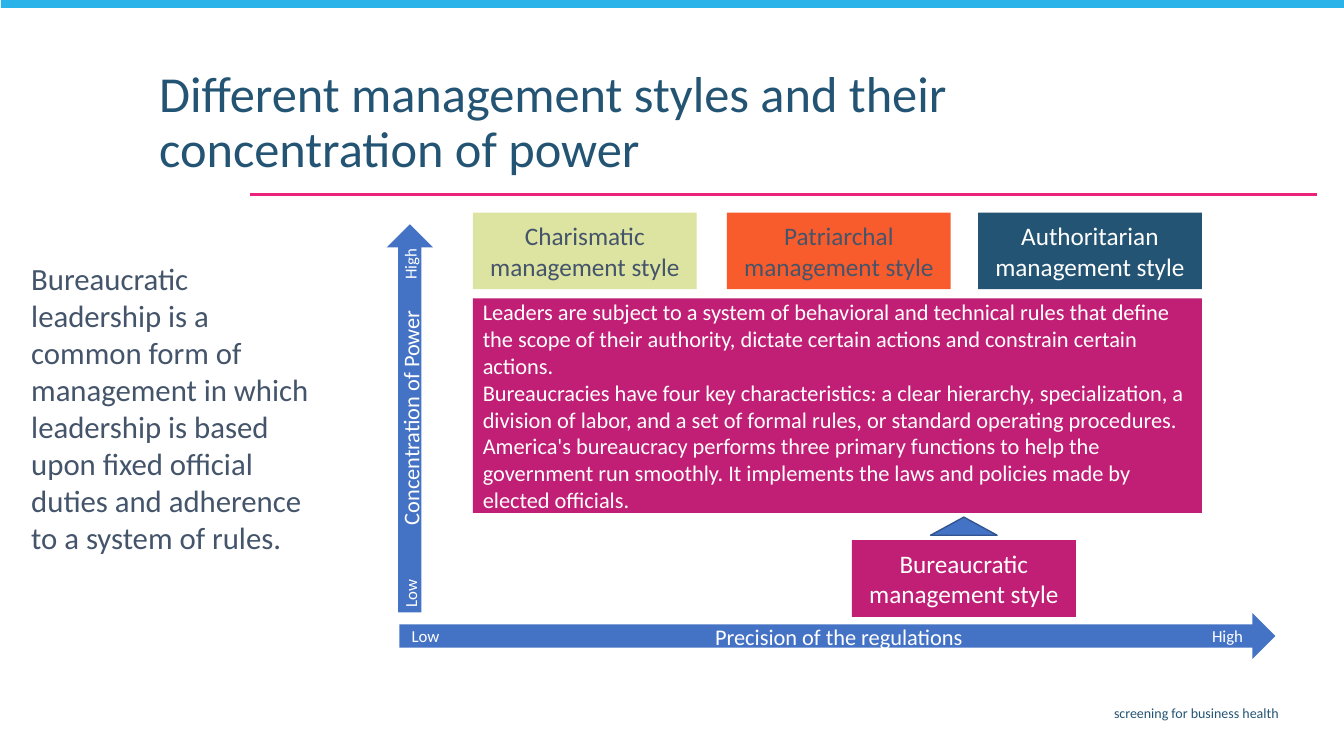
"""Slide on management styles placed by concentration of power and precision of rules."""
from lxml import etree
from pptx import Presentation, util as u
from pptx.dml.color import RGBColor
from pptx.enum import shapes as s, text as t
from pptx.oxml import ns

PX = 9144
COLORS = {
    "sky": "29B3E8", "pink": "EC2179", "navy": "245473", "slate": "44546A",
    "blue": "4472C4", "edge": "325491", "lime": "DDE3A0", "orange": "F95C2C",
    "magenta": "C01F75", "white": "FFFFFF",
}


def write(holder, paragraphs, size, color, align="LEFT", **frame_format):
    frame = holder.text_frame
    settings = {"word_wrap": True, "vertical_anchor": t.MSO_ANCHOR.TOP, **frame_format}
    for name, value in settings.items():
        setattr(frame, name, value)
    for index, words in enumerate(paragraphs):
        paragraph = frame.paragraphs[0] if index == 0 else frame.add_paragraph()
        paragraph.text = words
        paragraph.alignment = t.PP_ALIGN[align]
        font = {"name": "Calibri", "size": u.Pt(size)}
        for name, value in font.items():
            setattr(paragraph.font, name, value)
        paragraph.font.color.rgb = RGBColor.from_string(COLORS[color])


def block(preset, box, color):
    shape = slide.shapes.add_shape(s.MSO_SHAPE[preset], *(n * PX for n in box))
    shape.shadow.inherit = False
    shape.fill.solid()
    shape.fill.fore_color.rgb = RGBColor.from_string(COLORS[color])
    shape.line.fill.background()
    return shape


deck = Presentation()
deck.slide_width, deck.slide_height = 1333 * PX, 750 * PX
slide = deck.slides.add_slide(deck.slide_layouts[6])

title_rule = slide.shapes.add_connector(
    s.MSO_CONNECTOR.STRAIGHT, 1306 * PX, 193 * PX, 248 * PX, 193 * PX)
title_rule.line.color.rgb = RGBColor.from_string(COLORS["pink"])
title_rule.line.width = u.Pt(1.5)
etree.SubElement(title_rule.element.spPr, ns.qn("a:effectLst"))

block("RECTANGLE", (1, -2, 1334, 10), "sky")

footer = slide.shapes.add_textbox(365 * PX, 694 * PX, 913 * PX, 29 * PX)
write(footer, ["screening for business health"], 10, "navy", "RIGHT")

title = slide.shapes.add_textbox(148 * PX, 64 * PX, 1095 * PX, 76 * PX)
write(title, ["Different management styles and their concentration of power"],
      36, "navy", margin_right=30 * PX)
title.text_frame.paragraphs[0].line_spacing = 0.9

definition = slide.shapes.add_textbox(22 * PX, 254 * PX, 307 * PX, 268 * PX)
write(definition, [
    "Bureaucratic leadership is a common form of management in which leadership "
    "is based upon fixed official duties and adherence to a system of rules."],
    22, "slate", margin_left=9 * PX, margin_right=9 * PX,
    margin_top=4 * PX, margin_bottom=4 * PX)

axes = [
    (0, (396, 608, 869, 46), [
        ("Precision of the regulations", 16, (699, 613, 266, 37)),
        ("Low", 12, (398, 616, 48, 30)),
        ("High", 12, (1192, 616, 51, 30))]),
    (270, (214, 392, 385, 46), [
        ("Concentration of Power", 16, (290, 396, 234, 37)),
        ("Low", 12, (383, 574, 48, 30)),
        ("High", 12, (381, 247, 51, 30))]),
]
for rotation, arrow_box, labels in axes:
    block("RIGHT_ARROW", arrow_box, "blue").rotation = rotation
    for words, size, box in labels:
        label = slide.shapes.add_textbox(*(n * PX for n in box))
        label.rotation = rotation
        write(label, [words], size, "white", "CENTER",
              word_wrap=False, vertical_anchor=t.MSO_ANCHOR.MIDDLE)

styles = [
    ("Charismatic", 469, 211, "lime", "slate"),
    ("Patriarchal", 721, 211, "orange", "slate"),
    ("Authoritarian", 970, 211, "navy", "white"),
    ("Bureaucratic", 845, 536, "magenta", "white"),
]
for style, left, top, fill, ink in styles:
    style_box = block("RECTANGLE", (left, top, 222, 76), fill)
    write(style_box, [f"{style} management style"], 18, ink, "CENTER",
          vertical_anchor=t.MSO_ANCHOR.MIDDLE)

explanation = block("RECTANGLE", (469, 296, 723, 213), "magenta")
write(explanation, [
    "Leaders are subject to a system of behavioral and technical rules that define "
    "the scope of their authority, dictate certain actions and constrain certain actions.",
    "Bureaucracies have four key characteristics: a clear hierarchy, specialization, "
    "a division of labor, and a set of formal rules, or standard operating procedures. "
    "America's bureaucracy performs three primary functions to help the government run "
    "smoothly. It implements the laws and policies made by elected officials."],
    16, "white", vertical_anchor=t.MSO_ANCHOR.MIDDLE)

pointer = block("ISOSCELES_TRIANGLE", (923, 513, 66, 18), "blue")
pointer.line.color.rgb = RGBColor.from_string(COLORS["edge"])
pointer.line.width = u.Pt(1)

deck.save("out.pptx")
